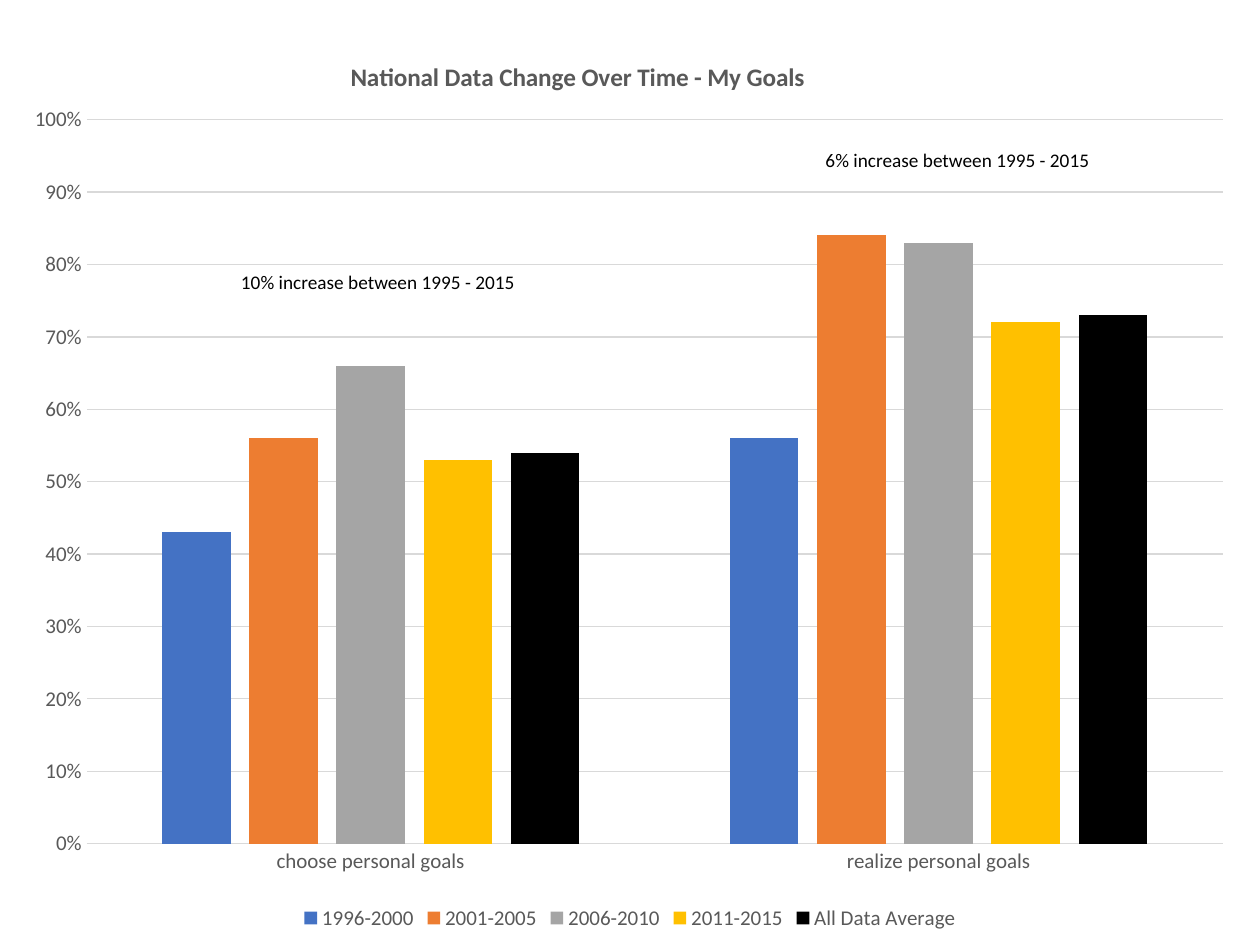
from dataclasses import dataclass, field
from lxml.etree import SubElement
from pptx import Presentation
from pptx.chart.data import CategoryChartData as ChartData
from pptx.dml.color import RGBColor as Color
from pptx.enum.chart import XL_CHART_TYPE as ChartType
from pptx.enum.chart import XL_LEGEND_POSITION as LegendPosition
from pptx.enum.chart import XL_TICK_MARK as TickMark
from pptx.enum.text import MSO_AUTO_SIZE as AutoSize
from pptx.enum.text import PP_ALIGN as Align
from pptx.oxml.ns import qn
from pptx.util import Inches, Pt

COLORS = {
    "ink": "000000", "gray": "595959", "grid": "D9D9D9",
    "blue": "4472C4", "orange": "ED7D31", "silver": "A5A5A5", "gold": "FFC000",
}
CATEGORIES = ["choose personal goals", "realize personal goals"]
PERIODS = [
    ("1996-2000", "blue", (0.43, 0.56)),
    ("2001-2005", "orange", (0.56, 0.84)),
    ("2006-2010", "silver", (0.66, 0.83)),
    ("2011-2015", "gold", (0.53, 0.72)),
    ("All Data Average", "ink", (0.54, 0.73)),
]
NOTES = [
    ("10% increase between 1995 - 2015", 0.17, 0.28),
    ("6% increase between 1995 - 2015", 0.63, 0.15),
]


def color(name):
    return Color.from_string(COLORS[name])


def set_font(font, size=12, tone="gray", bold=False, face="Calibri"):
    font.name, font.size, font.bold = face, Pt(size), bold
    font.color.rgb = color(tone)


def write(frame, text, align=Align.CENTER, **style):
    para = frame.paragraphs[0]
    para.alignment = align
    span = para.add_run()
    span.text = text
    set_font(span.font, **style)


def place(element, position, **shares):
    for old in element.findall(qn("c:layout")):
        element.remove(old)
    layout = SubElement(element, qn("c:layout"))
    element.insert(position, layout)
    manual = SubElement(layout, qn("c:manualLayout"))
    if "w" in shares:
        SubElement(manual, qn("c:layoutTarget"), val="inner")
    for axis in ("x", "y"):
        SubElement(manual, qn(f"c:{axis}Mode"), val="edge")
    for name, share in shares.items():
        SubElement(manual, qn(f"c:{name}"), val=str(share))


@dataclass
class SlideBuilder:
    """Holds the deck, its current page and the slide's proportions."""

    width: float = 10
    height: float = 7.5
    deck: object = field(default_factory=Presentation)
    page: object = None

    def add_page(self):
        self.deck.slide_width = Inches(self.width)
        self.deck.slide_height = Inches(self.height)
        self.page = self.deck.slides.add_slide(self.deck.slide_layouts[6])

    def area(self, left, top, width, height):
        return (Inches(left * self.width), Inches(top * self.height),
                Inches(width * self.width), Inches(height * self.height))

    def note(self, text, left, top):
        box = self.page.shapes.add_textbox(*self.area(left, top, 0.26, 0.04))
        frame = box.text_frame
        frame.word_wrap = True
        frame.auto_size = AutoSize.SHAPE_TO_FIT_TEXT
        write(frame, text, size=11, tone="ink")

    def column_chart(self, title, categories, periods, *area):
        data = ChartData(number_format="0%")
        data.categories = categories
        for name, _, values in periods:
            data.add_series(name, values)
        chart = self.page.shapes.add_chart(
            ChartType.COLUMN_CLUSTERED, *self.area(*area), data).chart
        set_font(chart.font)
        write(chart.chart_title.text_frame, title, size=14.4, bold=True)
        place(chart.chart_title.text_frame and chart.chart_title._element, 1, x=0.27, y=0.04)
        place(chart._chartSpace.chart.plotArea, 0, x=0.06, y=0.11, w=0.92, h=0.79)
        self.style_plot(chart.plots[0], periods)
        self.style_axes(chart.category_axis, chart.value_axis)
        chart.has_legend = True
        chart.legend.position = LegendPosition.BOTTOM
        chart.legend.include_in_layout = False
        set_font(chart.legend.font)

    def style_plot(self, plot, periods):
        plot.gap_width, plot.overlap = 219, -27
        plot.vary_by_categories = False
        for series, (_, tone, _) in zip(plot.series, periods):
            series.format.fill.solid()
            series.format.fill.fore_color.rgb = color(tone)

    def style_axes(self, category_axis, value_axis):
        for axis in (category_axis, value_axis):
            axis.major_tick_mark = axis.minor_tick_mark = TickMark.NONE
            set_font(axis.tick_labels.font)
        value_axis.minimum_scale, value_axis.maximum_scale = 0, 1
        value_axis.major_unit = 0.1
        value_axis.tick_labels.number_format = "0%"
        value_axis.tick_labels.number_format_is_linked = False
        value_axis.format.line.fill.background()
        for item in (category_axis, value_axis.major_gridlines):
            item.format.line.color.rgb = color("grid")
            item.format.line.width = Pt(0.75)


def main():
    builder = SlideBuilder()
    builder.add_page()
    builder.column_chart("National Data Change Over Time - My Goals",
                         CATEGORIES, PERIODS, 0.01, 0.02, 0.98, 0.97)
    for text, left, top in NOTES:
        builder.note(text, left, top)
    builder.deck.save("out.pptx")


if __name__ == "__main__":
    main()
